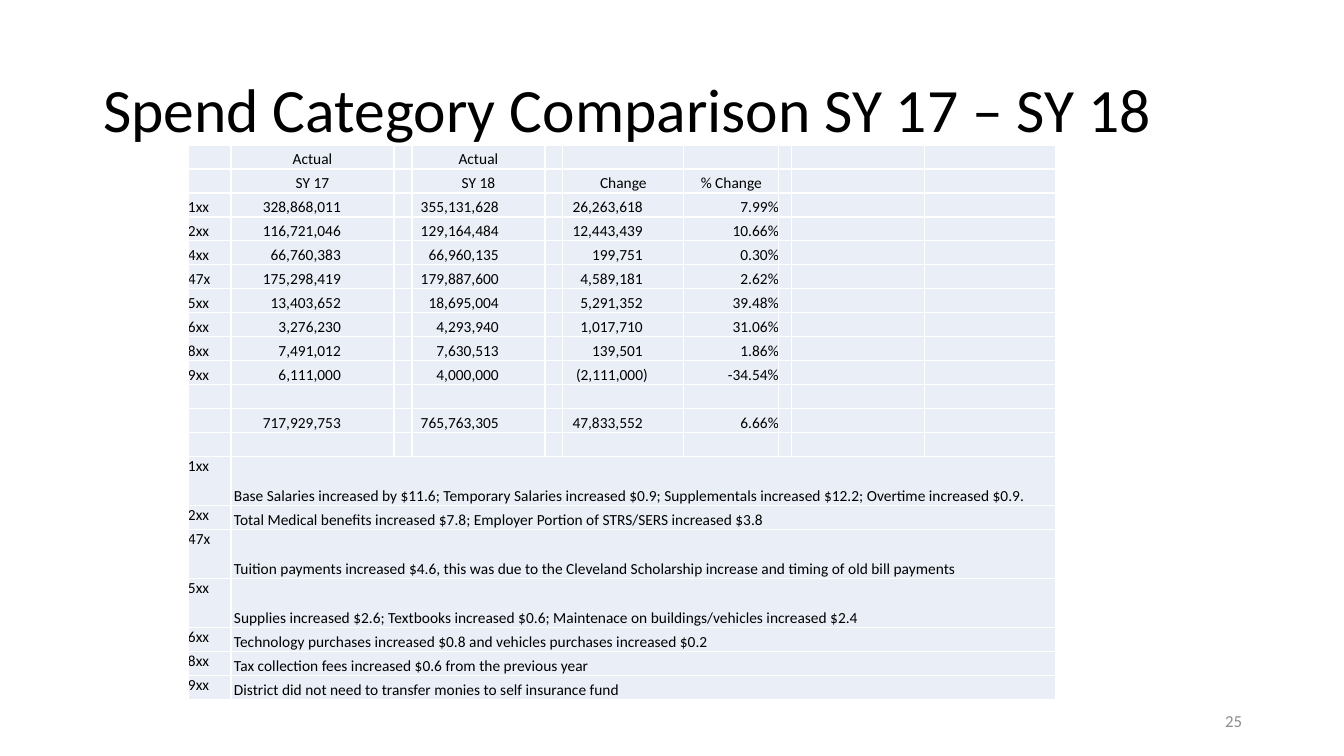
import dataclasses
import typing

import lxml.etree
import pptx
import pptx.dml.color
import pptx.enum.text
import pptx.oxml.ns
import pptx.util

ALIGN = pptx.enum.text.PP_ALIGN
ANCHOR = pptx.enum.text.MSO_ANCHOR
BLACK = pptx.dml.color.RGBColor(0x00, 0x00, 0x00)
GREY = pptx.dml.color.RGBColor(0x8C, 0x8C, 0x8C)
WHITE = pptx.dml.color.RGBColor(0xFF, 0xFF, 0xFF)
PALE_BLUE = pptx.dml.color.RGBColor(0xEA, 0xEF, 0xF7)
FONT = "Calibri"
EMU_PER_PX = 914400 / 100.8

COLUMN_WIDTHS = [43, 163, 18, 133, 18, 121, 95, 13, 133, 131]
ROW_HEIGHT = 24
TALL_ROW_HEIGHT = 49
CODE, SY17, SY18, CHANGE, PERCENT = 0, 1, 3, 5, 6
AMOUNT_MARGINS = {SY17: 53, SY18: 46, CHANGE: 41}
PARENTHESIS_WIDTH = 5
NOTE_MARGIN = 3


@dataclasses.dataclass(frozen=True)
class Spend:
    code: str
    sy17: str
    sy18: str
    change: str
    percent: str


@dataclasses.dataclass(frozen=True)
class Note:
    code: str
    text: str
    tall: bool = False


HEADERS = [
    {SY17: "Actual", SY18: "Actual"},
    {SY17: "SY 17", SY18: "SY 18", CHANGE: "Change", PERCENT: "% Change"},
]
SPENDS = [
    Spend("1xx", "328,868,011", "355,131,628", "26,263,618", "7.99%"),
    Spend("2xx", "116,721,046", "129,164,484", "12,443,439", "10.66%"),
    Spend("4xx", "66,760,383", "66,960,135", "199,751", "0.30%"),
    Spend("47x", "175,298,419", "179,887,600", "4,589,181", "2.62%"),
    Spend("5xx", "13,403,652", "18,695,004", "5,291,352", "39.48%"),
    Spend("6xx", "3,276,230", "4,293,940", "1,017,710", "31.06%"),
    Spend("8xx", "7,491,012", "7,630,513", "139,501", "1.86%"),
    Spend("9xx", "6,111,000", "4,000,000", "(2,111,000)", "-34.54%"),
    Spend("", "", "", "", ""),
    Spend("", "717,929,753", "765,763,305", "47,833,552", "6.66%"),
    Spend("", "", "", "", ""),
]
NOTES = [
    Note("1xx", "Base Salaries increased by $11.6; Temporary Salaries increased $0.9; "
         "Supplementals increased $12.2; Overtime increased $0.9.", True),
    Note("2xx", "Total Medical benefits increased $7.8; "
         "Employer Portion of STRS/SERS increased $3.8"),
    Note("47x", "Tuition payments increased $4.6, this was due to the Cleveland "
         "Scholarship increase and timing of old bill payments", True),
    Note("5xx", "Supplies increased $2.6; Textbooks increased $0.6; "
         "Maintenace on buildings/vehicles increased $2.4", True),
    Note("6xx", "Technology purchases increased $0.8 and vehicles purchases increased $0.2"),
    Note("8xx", "Tax collection fees increased $0.6 from the previous year"),
    Note("9xx", "District did not need to transfer monies to self insurance fund"),
]


def px(length: int) -> pptx.util.Emu:
    return pptx.util.Emu(round(length * EMU_PER_PX))


def format_paragraph(paragraph: typing.Any, size: int, color: pptx.dml.color.RGBColor,
                     alignment: ALIGN) -> None:
    paragraph.alignment = alignment
    paragraph.font.name = FONT
    paragraph.font.size = pptx.util.Pt(size)
    paragraph.font.color.rgb = color


def prepare_cell(cell: typing.Any) -> None:
    """Give a cell its white borders, pale fill, zero margins and small text."""
    properties = cell._tc.get_or_add_tcPr()
    for side in ("lnL", "lnR", "lnT", "lnB"):
        line = lxml.etree.SubElement(properties, pptx.oxml.ns.qn(f"a:{side}"), w="12700")
        fill = lxml.etree.SubElement(line, pptx.oxml.ns.qn("a:solidFill"))
        lxml.etree.SubElement(fill, pptx.oxml.ns.qn("a:srgbClr"), val=str(WHITE))
    cell.fill.solid()
    cell.fill.fore_color.rgb = PALE_BLUE
    cell.margin_left = cell.margin_right = cell.margin_top = cell.margin_bottom = 0
    paragraph = cell.text_frame.paragraphs[0]
    lxml.etree.SubElement(paragraph._p, pptx.oxml.ns.qn("a:endParaRPr"), sz="1100")


def write_cell(cell: typing.Any, text: str, alignment: ALIGN = ALIGN.LEFT,
               anchor: ANCHOR = ANCHOR.BOTTOM, left: int = 0, right: int = 0) -> None:
    if not text:
        return
    cell.vertical_anchor = anchor
    cell.margin_left, cell.margin_right = px(left), px(right)
    paragraph = cell.text_frame.paragraphs[0]
    paragraph.add_run().text = text
    format_paragraph(paragraph, 11, BLACK, alignment)


def write_spend(table: typing.Any, row: int, spend: Spend) -> None:
    write_cell(table.cell(row, CODE), spend.code)
    for column, amount in zip(AMOUNT_MARGINS, (spend.sy17, spend.sy18, spend.change)):
        # A closing parenthesis hangs past the aligned digits
        overhang = PARENTHESIS_WIDTH if amount.endswith(")") else 0
        write_cell(table.cell(row, column), amount, ALIGN.RIGHT,
                   right=AMOUNT_MARGINS[column] - overhang)
    write_cell(table.cell(row, PERCENT), spend.percent, ALIGN.RIGHT)


def write_note(table: typing.Any, row: int, note: Note) -> None:
    write_cell(table.cell(row, CODE), note.code, anchor=ANCHOR.TOP)
    note_cell = table.cell(row, SY17)
    note_cell.merge(table.cell(row, len(COLUMN_WIDTHS) - 1))
    write_cell(note_cell, note.text, left=NOTE_MARGIN)


def add_spend_table(slide: typing.Any) -> None:
    heights = [ROW_HEIGHT] * (len(HEADERS) + len(SPENDS))
    heights += [TALL_ROW_HEIGHT if note.tall else ROW_HEIGHT for note in NOTES]
    table = slide.shapes.add_table(
        len(heights), len(COLUMN_WIDTHS), px(188), px(145),
        px(sum(COLUMN_WIDTHS)), px(sum(heights))).table
    table.first_row = table.horz_banding = False
    for column, width in zip(table.columns, COLUMN_WIDTHS):
        column.width = px(width)
    for row, height in zip(table.rows, heights):
        row.height = px(height)
    for cell in table.iter_cells():
        prepare_cell(cell)

    for row, header in enumerate(HEADERS):
        for column, text in header.items():
            write_cell(table.cell(row, column), text, ALIGN.CENTER)
    for row, spend in enumerate(SPENDS, len(HEADERS)):
        write_spend(table, row, spend)
    for row, note in enumerate(NOTES, len(HEADERS) + len(SPENDS)):
        write_note(table, row, note)


def add_title(slide: typing.Any) -> None:
    title = slide.shapes.title
    title.left, title.top, title.width, title.height = px(93), px(40), px(1159), px(146)
    frame = title.text_frame
    frame.text = "Spend Category Comparison SY 17 – SY 18"
    frame.vertical_anchor = ANCHOR.MIDDLE
    frame.auto_size = pptx.enum.text.MSO_AUTO_SIZE.NONE
    frame.paragraphs[0].line_spacing = 0.9
    format_paragraph(frame.paragraphs[0], 44, BLACK, ALIGN.LEFT)


def add_slide_number(slide: typing.Any) -> None:
    frame = slide.shapes.add_textbox(px(950), px(701), px(302), px(40)).text_frame
    frame.word_wrap = True
    frame.vertical_anchor = ANCHOR.MIDDLE
    frame.text = "25"
    format_paragraph(frame.paragraphs[0], 12, GREY, ALIGN.RIGHT)


def main() -> None:
    presentation = pptx.Presentation()
    presentation.slide_width, presentation.slide_height = px(1344), px(756)
    slide = presentation.slides.add_slide(presentation.slide_layouts.get_by_name("Title Only"))
    add_title(slide)
    add_slide_number(slide)
    add_spend_table(slide)
    presentation.save("out.pptx")


if __name__ == "__main__":
    main()
